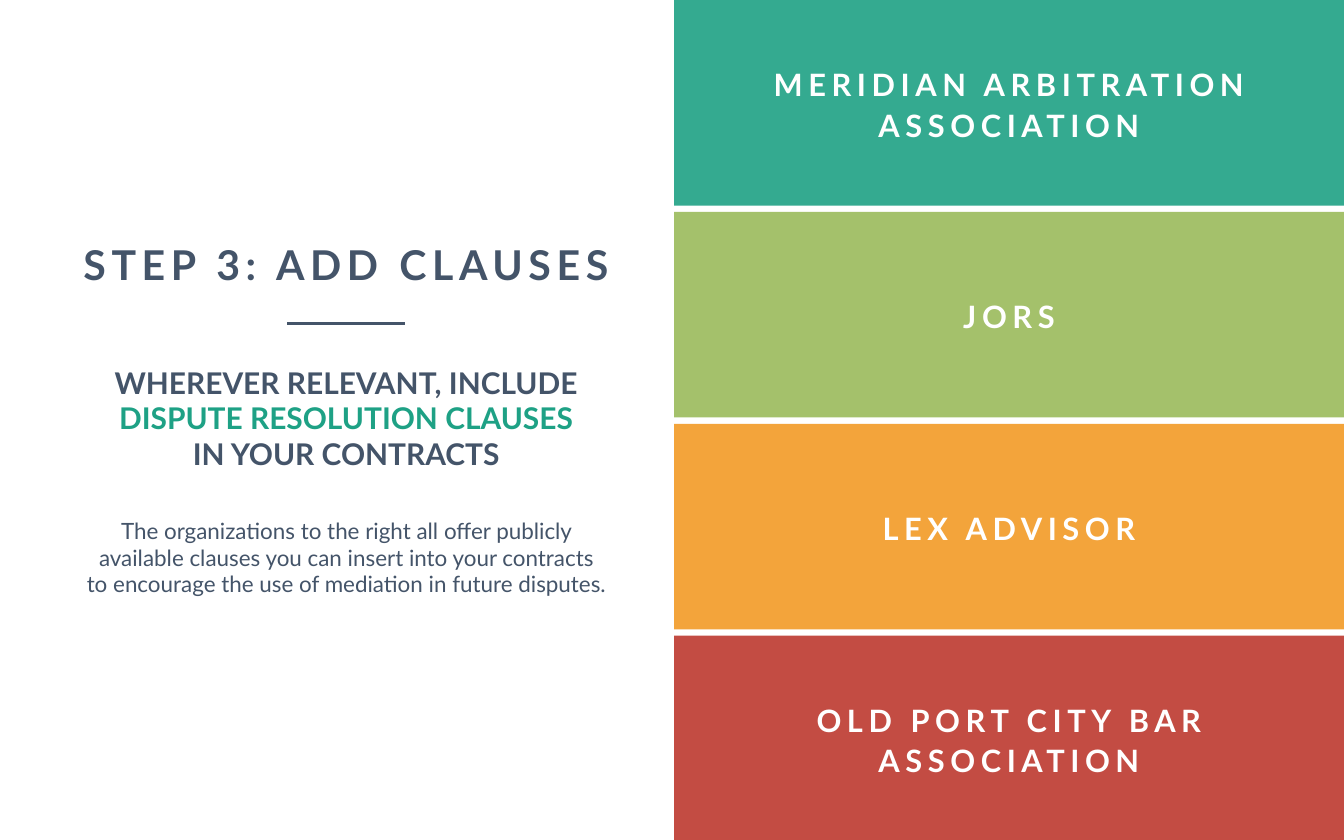
from pptx import Presentation
from pptx.dml.color import RGBColor
from pptx.enum.shapes import MSO_CONNECTOR, MSO_SHAPE
from pptx.enum.text import MSO_ANCHOR, PP_ALIGN
from pptx.oxml.ns import qn
from pptx.util import Cm, Pt
from lxml.etree import SubElement

COLORS = {
    "ink": "445469",
    "white": "FFFFFF",
    "teal": "1EA185",
    "green": "9BBB5C",
    "orange": "F29B26",
    "red": "BD392F",
}
BANDS = [
    ("teal", ["MERIDIAN ARBITRATION", "ASSOCIATION"]),
    ("green", ["JORS"]),
    ("orange", ["LEX ADVISOR"]),
    ("red", ["OLD PORT CITY BAR", "ASSOCIATION"]),
]


def rgb(name):
    return RGBColor.from_string(COLORS[name])


def add_run(p, text, size, color="ink", bold=True, spacing=0):
    r = p.add_run()
    r.text = text
    for key, value in {"name": "Lato", "size": Pt(size), "bold": bold}.items():
        setattr(r.font, key, value)
    r.font.color.rgb = rgb(color)
    if spacing:
        r._r.get_or_add_rPr().set("spc", str(spacing * 100))


def add_text(s, left, top, width, height):
    """Add an empty centred text box and return its paragraph."""
    tf = s.shapes.add_textbox(Cm(left), Cm(top), Cm(width), Cm(height)).text_frame
    tf.word_wrap = True
    p = tf.paragraphs[0]
    p.alignment = PP_ALIGN.CENTER
    return p


def add_message(s, left, top, width):
    """Heading, rule, key message and explanation, centred in one column."""
    p = add_text(s, left, top, width, 1.83)
    tf_format = {"margin_left": 0, "margin_right": 0, "margin_top": 0,
                 "margin_bottom": 0, "vertical_anchor": MSO_ANCHOR.MIDDLE}
    for key, value in tf_format.items():
        setattr(p._parent, key, value)
    p.line_spacing = Pt(55.5)
    add_run(p, "STEP 3: ADD CLAUSES", 44, spacing=6)

    center, rule_width, rule_top = left + width / 2, 4.45, top + 3.22
    rule = s.shapes.add_connector(
        MSO_CONNECTOR.STRAIGHT,
        Cm(center - rule_width / 2), Cm(rule_top),
        Cm(center + rule_width / 2), Cm(rule_top))
    rule.line.color.rgb = rgb("ink")
    rule.line.width = Pt(3)
    SubElement(rule._element.spPr, qn("a:effectLst"))

    p = add_text(s, left + 0.74, top + 4.62, width - 1.48, 4.37)
    add_run(p, "WHEREVER RELEVANT, INCLUDE ", 32)
    add_run(p, "DISPUTE RESOLUTION CLAUSES", 32, "teal")
    add_run(p, " IN YOUR CONTRACTS", 32)

    p = add_text(s, left, top + 10.39, width, 3.33)
    add_run(p, "The organizations to the right all offer publicly available "
               "clauses you can insert into your contracts to encourage the "
               "use of mediation in future disputes.", 24, bold=False)


def add_band(s, left, top, width, height, color, lines):
    sp = s.shapes.add_shape(MSO_SHAPE.RECTANGLE, Cm(left), Cm(top), Cm(width), Cm(height))
    sp.shadow.inherit = False
    sp.line.fill.background()
    sp.fill.solid()
    sp.fill.fore_color.rgb = rgb(color)
    fill_color = sp._element.spPr.find(qn("a:solidFill"))[0]
    SubElement(fill_color, qn("a:alpha")).set("val", "90000")

    tf = sp.text_frame
    tf.word_wrap = True
    tf.vertical_anchor = MSO_ANCHOR.MIDDLE
    for i, line in enumerate(lines):
        p = tf.add_paragraph() if i else tf.paragraphs[0]
        p.alignment = PP_ALIGN.CENTER
        p.line_spacing = 1.1
        add_run(p, line, 33, "white", spacing=6)


def add_bands(s, left, top, width, height, gap=0.24):
    """Stack equal bands, one per organization, down the given box."""
    band_height = (height - gap * (len(BANDS) - 1)) / len(BANDS)
    for i, (color, lines) in enumerate(BANDS):
        add_band(s, left, top + i * (band_height + gap), width, band_height, color, lines)


def main():
    prs = Presentation()
    prs.slide_width, prs.slide_height = Cm(50.8), Cm(31.75)
    s = prs.slides.add_slide(prs.slide_layouts[6])
    add_message(s, 3.02, 9.02, 20.14)
    add_bands(s, 25.48, 0, 25.32, 31.8)
    prs.save("out.pptx")


if __name__ == "__main__":
    main()
